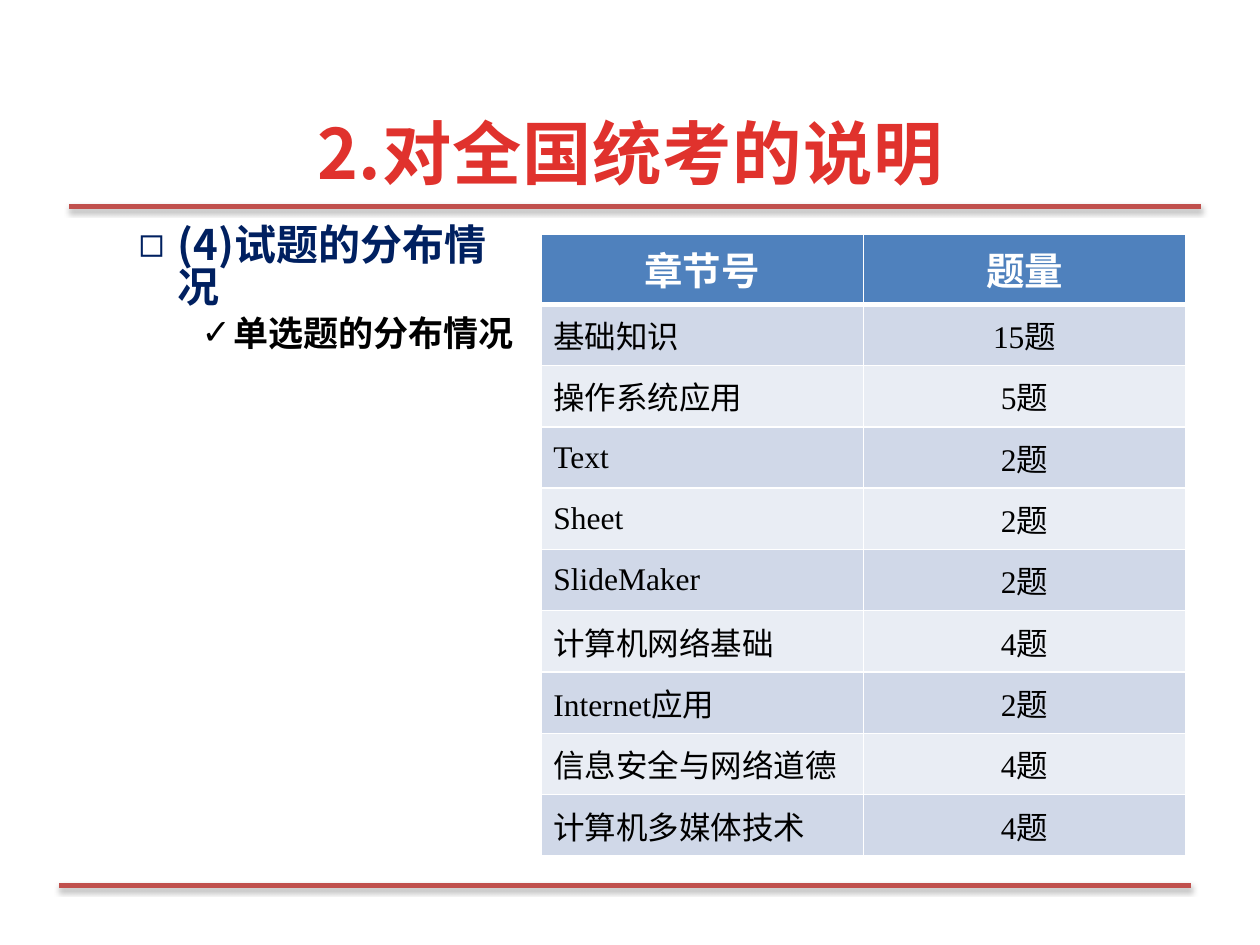
from lxml import etree
from pptx import Presentation
from pptx.dml.color import RGBColor
from pptx.enum.shapes import MSO_CONNECTOR
from pptx.enum.text import MSO_ANCHOR, MSO_AUTO_SIZE, PP_ALIGN
from pptx.oxml import parse_xml
from pptx.oxml.ns import nsdecls, qn
from pptx.util import Pt

STRAIGHT = MSO_CONNECTOR.STRAIGHT
TOP, MIDDLE = MSO_ANCHOR.TOP, MSO_ANCHOR.MIDDLE
LEFT, CENTER = PP_ALIGN.LEFT, PP_ALIGN.CENTER
NO_FIT = MSO_AUTO_SIZE.NONE

WHITE = RGBColor(0xFF, 0xFF, 0xFF)
BLACK = RGBColor(0, 0, 0)
NAVY = RGBColor(0x00, 0x20, 0x60)
RULE_RED = RGBColor(0xC0, 0x50, 0x4D)
TITLE_RED = RGBColor(0xE0, 0x32, 0x2D)
DARK_RED = RGBColor(0xA2, 0x20, 0x1C)
HEADER_BLUE = RGBColor(0x4F, 0x81, 0xBD)
BANDS = (RGBColor(0xD0, 0xD8, 0xE8), RGBColor(0xE9, 0xED, 0xF4))

TITLE_FONT = "Noto Sans CJK JP"
CJK_FONT = "Noto Sans CJK SC"

HEADER = ("章节号", "题量")
CHAPTERS = [
    ("基础知识", "15题"),
    ("操作系统应用", "5题"),
    ("Text", "2题"),
    ("Sheet", "2题"),
    ("SlideMaker", "2题"),
    ("计算机网络基础", "4题"),
    ("Internet应用", "2题"),
    ("信息安全与网络道德", "4题"),
    ("计算机多媒体技术", "4题"),
]


def write(p, text, size, color, font=CJK_FONT, east=CJK_FONT, bold=False, align=LEFT):
    p.alignment = align
    r = p.add_run()
    r.text = text
    r.font.size = Pt(size)
    r.font.bold = bold
    r.font.color.rgb = color
    r.font.name = font
    rPr = r._r.get_or_add_rPr()
    rPr.find(qn("a:latin")).addnext(parse_xml(f'<a:ea {nsdecls("a")} typeface="{east}"/>'))
    return r


def place(s, box):
    s.left, s.top, s.width, s.height = (Pt(v) for v in box)
    s.text_frame.word_wrap = True
    s.text_frame.auto_size = NO_FIT


def add_rule(slide, x, y, length):
    s = slide.shapes.add_connector(STRAIGHT, Pt(x), Pt(y), Pt(x + length), Pt(y))
    s.line.color.rgb = RULE_RED
    s.line.width = Pt(3)
    s._element.spPr.append(parse_xml(
        f'<a:effectLst {nsdecls("a")}>'
        f'<a:outerShdw blurRad="{Pt(3.1)}" dist="{Pt(1.8)}" dir="5400000" rotWithShape="0">'
        '<a:srgbClr val="000000"><a:alpha val="35000"/></a:srgbClr>'
        '</a:outerShdw></a:effectLst>'))


def add_title(slide, box, text):
    s = slide.shapes.title
    place(s, box)
    s.text_frame.vertical_anchor = MIDDLE
    r = write(s.text_frame.paragraphs[0], text, 39.6, TITLE_RED,
              font=TITLE_FONT, east=TITLE_FONT, bold=True, align=CENTER)
    r._r.get_or_add_rPr().set("spc", "50")
    fill = r.font.fill
    fill.gradient()
    fill.gradient_angle = 270
    for stop, position, color in zip(fill.gradient_stops, (0.25, 1), (TITLE_RED, DARK_RED)):
        stop.position = position
        stop.color.rgb = color


def add_bullet(p, mark, level, margin, hanging):
    p.level = level
    pPr = p._p.get_or_add_pPr()
    pPr.set("marL", str(Pt(margin)))
    pPr.set("indent", str(-Pt(hanging)))
    etree.SubElement(pPr, qn("a:buFont")).set("typeface", "Arial")
    etree.SubElement(pPr, qn("a:buChar")).set("char", mark)
    p.line_spacing = 0.84


def add_outline(slide, box):
    s = slide.placeholders[1]
    place(s, box)
    tf = s.text_frame
    tf.vertical_anchor = TOP
    p = tf.paragraphs[0]
    add_bullet(p, "◻", 1, 58.5, 22.5)
    p.space_before = Pt(0)
    write(p, "(4)试题的分布情况", 24, NAVY, bold=True)
    p = tf.add_paragraph()
    add_bullet(p, "✓", 2, 90, 18)
    p.space_before = Pt(4)
    write(p, "单选题的分布情况", 20, BLACK, font="Calibri", bold=True)


def format_cell(cell, text, fill, anchor, bottom=1, **style):
    cell.margin_left = cell.margin_right = Pt(7.2)
    cell.margin_top = cell.margin_bottom = Pt(4)
    cell.vertical_anchor = anchor
    tcPr = cell._tc.get_or_add_tcPr()
    for side, width in zip("LRTB", (1, 1, 1, bottom)):
        tcPr.append(parse_xml(
            f'<a:ln{side} {nsdecls("a")} w="{Pt(width)}"><a:solidFill>'
            f'<a:srgbClr val="{WHITE}"/></a:solidFill></a:ln{side}>'))
    cell.fill.solid()
    cell.fill.fore_color.rgb = fill
    write(cell.text_frame.paragraphs[0], text, **style)


def add_chapter_table(slide, box):
    rows, cols = len(CHAPTERS) + 1, len(HEADER)
    table = slide.shapes.add_table(rows, cols, *(Pt(v) for v in box)).table
    table.horz_banding = False
    for column in table.columns:
        column.width = Pt(box[2] / cols)
    for row in table.rows:
        row.height = Pt(box[3] / rows)
    for col, text in enumerate(HEADER):
        format_cell(table.cell(0, col), text, HEADER_BLUE, TOP, bottom=3,
                    size=22, color=WHITE, font="Calibri", bold=True, align=CENTER)
    for row, values in enumerate(CHAPTERS, 1):
        for col, text in enumerate(values):
            format_cell(table.cell(row, col), text, BANDS[(row - 1) % 2], MIDDLE,
                        size=18, color=BLACK, font="Times New Roman",
                        align=CENTER if col else LEFT)


def main():
    prs = Presentation()
    prs.slide_width, prs.slide_height = Pt(720), Pt(540)
    slide = prs.slides.add_slide(prs.slide_layouts[1])
    add_rule(slide, 39.6, 118.2, 646.6)
    add_rule(slide, 33.8, 506.2, 646.6)
    add_title(slide, (36, 62, 648, 49.7), "2.对全国统考的说明")
    add_outline(slide, (36, 126, 273, 374.4))
    add_chapter_table(slide, (309, 134, 368.6, 350.6))
    prs.save("out.pptx")


if __name__ == "__main__":
    main()
